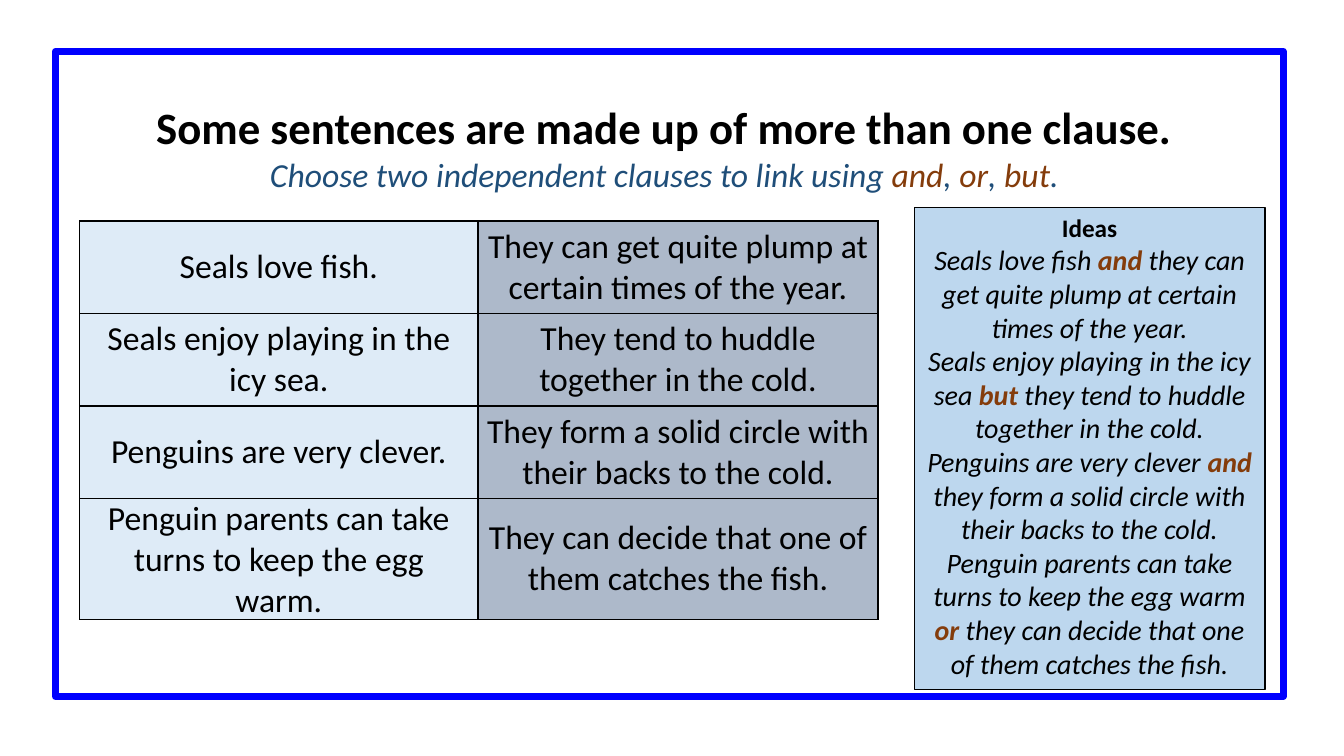
import pptx
import pptx.dml.color
import pptx.enum.shapes
import pptx.enum.text
import pptx.oxml
import pptx.oxml.ns
import pptx.util
from pptx.util import Pt

BLACK = "000000"
NAVY = "1F4E79"
BROWN = "843C0B"
CLAUSES = [
    ("Seals love fish.", "They can get quite plump at certain times of the year."),
    ("Seals enjoy playing in the icy sea.", "They tend to huddle together in the cold."),
    ("Penguins are very clever.", "They form a solid circle with their backs to the cold."),
    ("Penguin parents can take turns to keep the egg warm.",
     "They can decide that one of them catches the fish."),
]
# Asterisks enclose the conjunctions
IDEAS = [
    "Seals love fish *and* they can get quite plump at certain times of the year.",
    "Seals enjoy playing in the icy sea *but* they tend to huddle together in the cold.",
    "Penguins are very clever *and* they form a solid circle with their backs to the cold.",
    "Penguin parents can take turns to keep the egg warm *or* they can decide that "
    "one of them catches the fish.",
]


def rgb(code):
    return pptx.dml.color.RGBColor.from_string(code)


class ClauseSlide:
    font = "Calibri"

    def __init__(self, deck):
        self.slide = deck.slides.add_slide(deck.slide_layouts[5])

    def style(self, run, size, color=BLACK, bold=False, italic=False):
        run.font.name = self.font
        run.font.size = Pt(size)
        run.font.color.rgb = rgb(color)
        run.font.bold = bold
        run.font.italic = italic

    def line(self, paragraph, text, size, color=BLACK, bold=False):
        paragraph.text = text
        paragraph.alignment = pptx.enum.text.PP_ALIGN.CENTER
        self.style(paragraph.runs[0], size, color, bold)

    def marked_line(self, paragraph, text, size, color, bold_marks):
        paragraph.alignment = pptx.enum.text.PP_ALIGN.CENTER
        for index, part in enumerate(text.split("*")):
            marked = index % 2 == 1
            run = paragraph.add_run()
            run.text = part
            self.style(run, size, BROWN if marked else color,
                       bold=marked and bold_marks, italic=True)

    def heading(self, left, top, width, height, title, task):
        heading = self.slide.shapes.title
        heading.left, heading.top = Pt(left), Pt(top)
        heading.width, heading.height = Pt(width), Pt(height)
        frame = heading.text_frame
        frame.word_wrap = True
        frame.auto_size = pptx.enum.text.MSO_AUTO_SIZE.SHAPE_TO_FIT_TEXT
        frame.vertical_anchor = pptx.enum.text.MSO_ANCHOR.TOP
        self.line(frame.paragraphs[0], title, 32, bold=True)
        self.marked_line(frame.add_paragraph(), task, 24, NAVY, False)

    def box(self, left, top, width, height, line, weight, fill=None):
        box = self.slide.shapes.add_shape(
            pptx.enum.shapes.MSO_SHAPE.RECTANGLE, Pt(left), Pt(top), Pt(width), Pt(height))
        box.shadow.inherit = False
        box.line.color.rgb = rgb(line)
        box.line.width = Pt(weight)
        if fill:
            box.fill.solid()
            box.fill.fore_color.rgb = rgb(fill)
        else:
            box.fill.background()
        return box

    def ideas(self, left, top, width, height, title, sentences):
        panel = self.box(left, top, width, height, BLACK, 0.75, "BDD7EE")
        frame = panel.text_frame
        frame.word_wrap = True
        frame.auto_size = pptx.enum.text.MSO_AUTO_SIZE.SHAPE_TO_FIT_TEXT
        frame.vertical_anchor = pptx.enum.text.MSO_ANCHOR.TOP
        self.line(frame.paragraphs[0], title, 18, bold=True)
        for sentence in sentences:
            self.marked_line(frame.add_paragraph(), sentence, 20, BLACK, True)

    def cell_borders(self, cell, weight):
        properties = cell._tc.get_or_add_tcPr()
        for side in ("lnL", "lnR", "lnT", "lnB"):
            properties.append(pptx.oxml.parse_xml(
                f'<a:{side} {pptx.oxml.ns.nsdecls("a")} w="{Pt(weight)}"><a:solidFill>'
                f'<a:srgbClr val="{BLACK}"/></a:solidFill></a:{side}>'))

    def clause_table(self, left, top, widths, row_height, rows, fills):
        table = self.slide.shapes.add_table(
            len(rows), len(widths), Pt(left), Pt(top),
            Pt(sum(widths)), Pt(row_height * len(rows))).table
        table.first_row = table.horz_banding = False
        for column, width in zip(table.columns, widths):
            column.width = Pt(width)
        for row_index, clauses in enumerate(rows):
            table.rows[row_index].height = Pt(row_height)
            for column_index, clause in enumerate(clauses):
                cell = table.cell(row_index, column_index)
                self.cell_borders(cell, 1)
                cell.fill.solid()
                cell.fill.fore_color.rgb = rgb(fills[column_index])
                cell.margin_left = cell.margin_right = Pt(5)
                cell.margin_top = cell.margin_bottom = 0
                cell.vertical_anchor = pptx.enum.text.MSO_ANCHOR.MIDDLE
                self.line(cell.text_frame.paragraphs[0], clause, 24)


def main():
    deck = pptx.Presentation()
    deck.slide_width, deck.slide_height = Pt(960), Pt(540)
    page = ClauseSlide(deck)

    # Heading and task
    page.heading(58.3, 67.7, 832.3, 75,
                 "Some sentences are made up of more than one clause.",
                 "Choose two independent clauses to link using *and*, *or*, *but*.")

    # Page frame
    page.box(39.6, 36.7, 877, 460.8, "0000FF", 5)

    # Model answers
    page.ideas(653, 148.3, 250.6, 344.2, "Ideas", IDEAS)

    # Clauses to combine
    page.clause_table(56.9, 157.9, (284.5, 285.8), 66.1, CLAUSES, ("DEEBF7", "ADB9CA"))

    deck.save("out.pptx")


if __name__ == "__main__":
    main()
